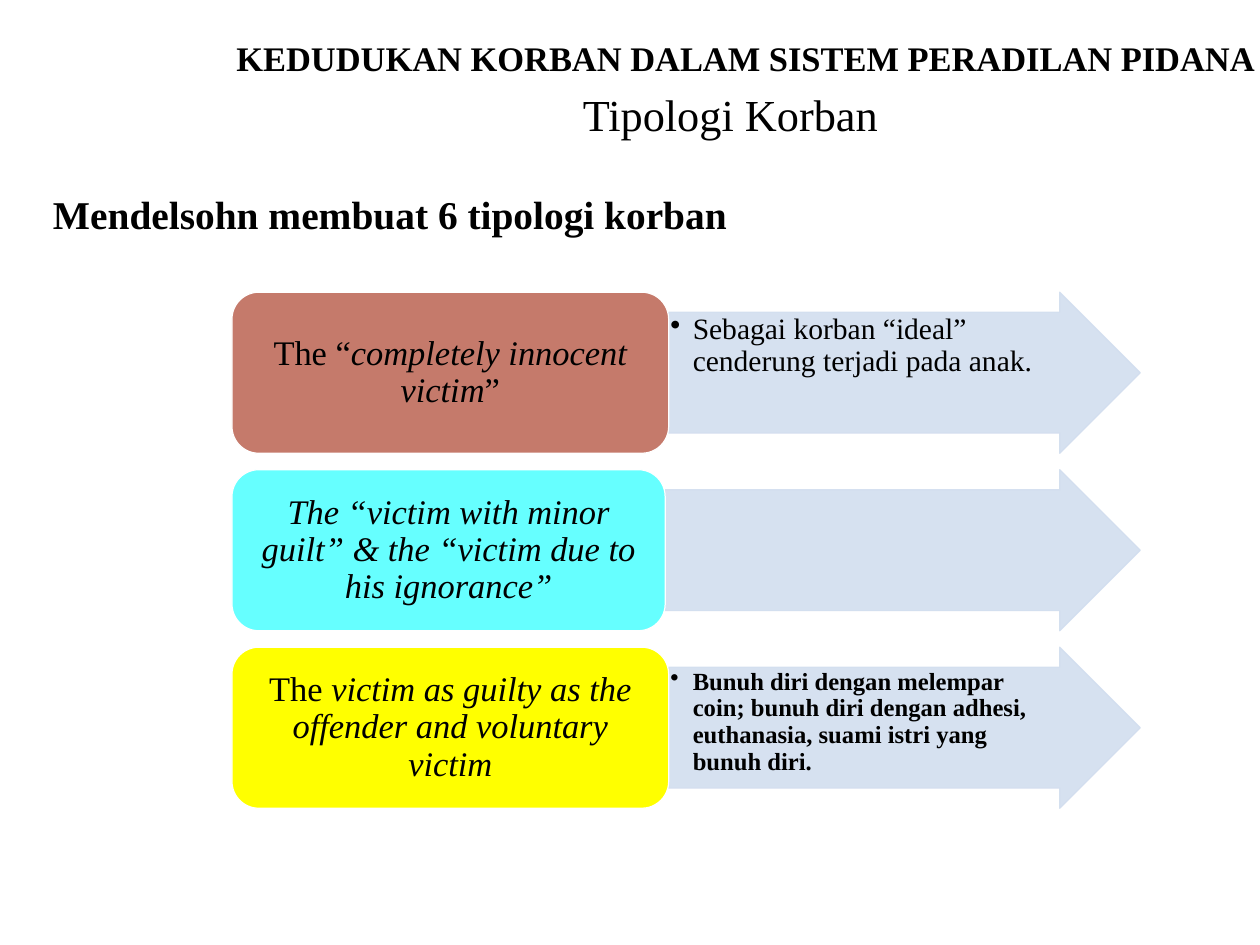
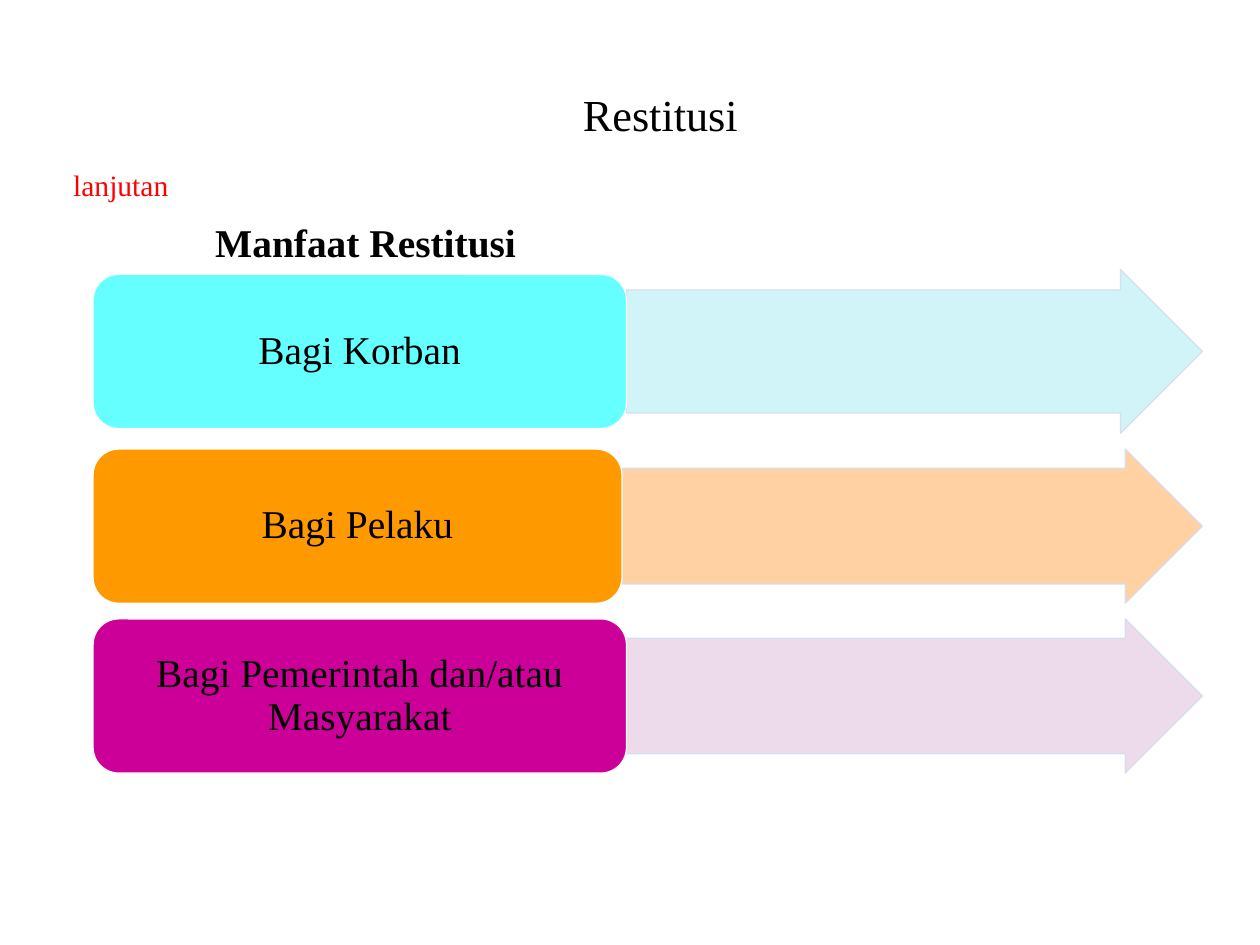
import pptx
import pptx.dml.color
import pptx.enum.shapes
import pptx.enum.text
import pptx.oxml.ns
import pptx.util
from lxml import etree

Cm = pptx.util.Cm
Pt = pptx.util.Pt
ALIGN = pptx.enum.text.PP_ALIGN
ANCHOR = pptx.enum.text.MSO_ANCHOR
SHAPE = pptx.enum.shapes.MSO_SHAPE

# Shared style
FONT = "Times New Roman"
BLACK, WHITE, RED = "000000", "FFFFFF", "FF0000"
PALE_BLUE, CYAN = "D2DEEF", "66FFFF"
ARROW_OPACITY = 90


def rgb(value):
    return pptx.dml.color.RGBColor.from_string(value)


def set_font(paragraph, size, color=BLACK, bold=False):
    font = paragraph.font
    font.name, font.size, font.bold = FONT, Pt(size), bold
    font.color.rgb = rgb(color)


def set_margins(frame, left, top, right, bottom):
    frame.margin_left, frame.margin_top = Cm(left), Cm(top)
    frame.margin_right, frame.margin_bottom = Cm(right), Cm(bottom)


def add_opacity(shape, percent):
    """Make the solid fill and the outline slightly transparent."""
    for color in shape._element.spPr.iter(pptx.oxml.ns.qn("a:srgbClr")):
        alpha = etree.SubElement(color, pptx.oxml.ns.qn("a:alpha"))
        alpha.set("val", str(percent * 1000))


def add_bullet(paragraph, indent):
    properties = paragraph._p.get_or_add_pPr()
    properties.set("marL", str(Cm(indent)))
    properties.set("indent", str(-Cm(indent)))
    bullet = etree.SubElement(properties, pptx.oxml.ns.qn("a:buChar"))
    bullet.set("char", "•")


def add_text(slide, text, left, top, width, height, size, color=BLACK,
             bold=False, align=ALIGN.LEFT, indent=0):
    box = slide.shapes.add_textbox(Cm(left), Cm(top), Cm(width), Cm(height))
    box.text_frame.word_wrap = True
    paragraph = box.text_frame.paragraphs[0]
    paragraph.text, paragraph.alignment = text, align
    paragraph._p.get_or_add_pPr().set("marL", str(Cm(indent)))
    set_font(paragraph, size, color, bold)


def add_title(slide, text):
    add_text(slide, text, 16.46, 2.39, 11.4, 1.8, 36)


def add_block(slide, kind, left, top, width, height, fill, line):
    shape = slide.shapes.add_shape(kind, Cm(left), Cm(top), Cm(width), Cm(height))
    shape.shadow.inherit = False
    shape.fill.solid()
    shape.fill.fore_color.rgb = rgb(fill)
    shape.line.color.rgb = rgb(line)
    shape.line.width = Pt(1)
    shape.text_frame.word_wrap = True
    return shape


def add_arrow(slide, left, top, width, height, fill):
    arrow = add_block(slide, SHAPE.RIGHT_ARROW, left, top, width, height,
                      fill, PALE_BLUE)
    arrow.adjustments[0], arrow.adjustments[1] = 0.75, 0.5
    add_opacity(arrow, ARROW_OPACITY)
    return arrow


def add_note(arrow, text, size, bold):
    """Write a bulleted explanation inside an arrow."""
    frame = arrow.text_frame
    frame.vertical_anchor = ANCHOR.TOP
    set_margins(frame, 0.05, 0.05, 1.16, 0.05)
    paragraph = frame.paragraphs[0]
    paragraph.text, paragraph.alignment = text, ALIGN.LEFT
    paragraph.line_spacing = 0.9
    add_bullet(paragraph, 0.64)
    set_font(paragraph, size, bold=bold)


def add_label(slide, left, top, width, height, fill, runs, size):
    """Draw a rounded box whose label is a list of (text, italic) runs."""
    box = add_block(slide, SHAPE.ROUNDED_RECTANGLE, left, top, width, height,
                    fill, WHITE)
    frame = box.text_frame
    frame.vertical_anchor = ANCHOR.MIDDLE
    set_margins(frame, 0.3, 0.15, 0.3, 0.15)
    paragraph = frame.paragraphs[0]
    paragraph.alignment, paragraph.line_spacing = ALIGN.CENTER, 0.9
    set_font(paragraph, size)
    for text, italic in runs:
        run = paragraph.add_run()
        run.text = text
        if italic:
            run.font.italic = True


def build_typology(slide):
    add_text(slide, "KEDUDUKAN KORBAN DALAM SISTEM PERADILAN PIDANA",
             6.07, 0.94, 30.6, 1.45, 28, bold=True, align=ALIGN.CENTER)
    add_text(slide, "Mendelsohn membuat 6 tipologi korban",
             0, 5.33, 35.8, 1.63, 32, bold=True, indent=1.27)

    # Rows: box width, box colour, label runs, note (text, size, bold)
    rows = [
        (12.52, "C57A6B",
         [("The “", False), ("completely innocent victim", True), ("”", False)],
         ("Sebagai korban “ideal” cenderung terjadi pada anak.", 24, False)),
        (12.42, CYAN,
         [("The “victim with minor guilt” & the “victim due to his ignorance”",
           True)], None),
        (12.52, "FFFF00",
         [("The ", False),
          ("victim as guilty as the offender and voluntary victim", True)],
         ("Bunuh diri dengan melempar coin; bunuh diri dengan adhesi, "
          "euthanasia, suami istri yang bunuh diri.", 20, True)),
    ]
    left, right, first_top, pitch, height = 6.65, 32.69, 8.38, 5.09, 4.62
    for index, (width, fill, runs, note) in enumerate(rows):
        top = first_top + index * pitch
        arrow = add_arrow(slide, left + width, top, right - left - width,
                          height, PALE_BLUE)
        if note:
            add_note(arrow, *note)
        add_label(slide, left, top, width, height, fill, runs, 28)
    add_title(slide, "Tipologi Korban")


def build_restitution(slide):
    add_text(slide, "Manfaat Restitusi", 4.65, 6.12, 31.47, 1.63, 32,
             bold=True, indent=1.27)

    # Rows: top, box width, box colour, arrow colour, arrow overhang, label
    rows = [
        (7.87, 15.29, CYAN, "CBF3F7", 0.14, "Bagi Korban"),
        (12.88, 15.16, "FF9900", "FFCC99", 0, "Bagi Pelaku"),
        (17.75, 15.29, "CC0099", "ECD6E8", 0,
         "Bagi Pemerintah dan/atau Masyarakat"),
    ]
    left, right, height = 2.67, 34.47, 4.42
    for top, width, fill, arrow_fill, overhang, label in rows:
        add_arrow(slide, left + width, top - overhang, right - left - width,
                  height + 2 * overhang, arrow_fill)
        add_label(slide, left, top, width, height, fill, [(label, False)], 32)
    add_title(slide, "Restitusi")
    add_text(slide, "lanjutan", 1.85, 4.65, 8.4, 1.27, 24, color=RED)


def main():
    presentation = pptx.Presentation()
    presentation.slide_width, presentation.slide_height = Cm(36.12), Cm(27.1)
    blank = presentation.slide_layouts[6]
    for build in (build_typology, build_restitution):
        build(presentation.slides.add_slide(blank))
    presentation.save("out.pptx")


if __name__ == "__main__":
    main()
